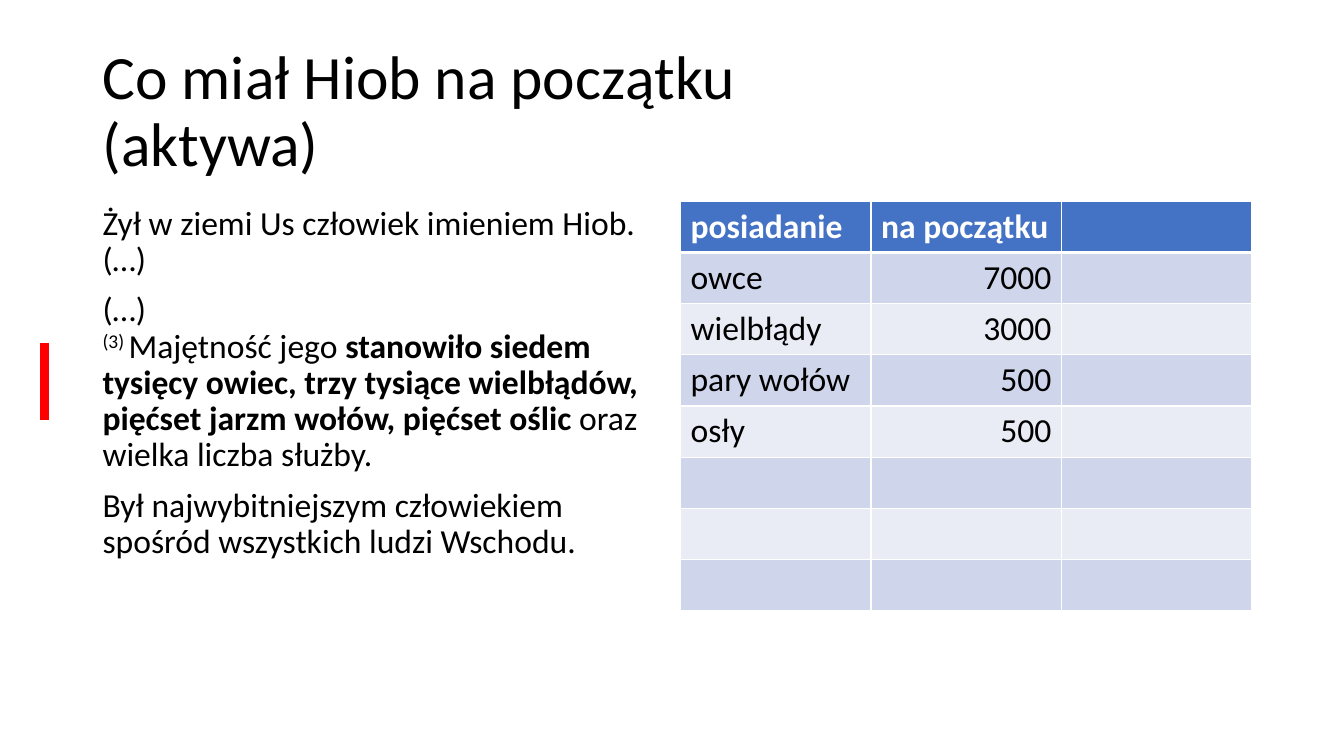
from copy import deepcopy

from lxml.etree import SubElement
from pptx import Presentation
from pptx.dml.color import RGBColor
from pptx.enum.shapes import MSO_CONNECTOR
from pptx.enum.text import MSO_ANCHOR, MSO_AUTO_SIZE, PP_ALIGN
from pptx.oxml.ns import qn
from pptx.util import Cm, Pt

COLORS = {
    "text": "000000",
    "white": "FFFFFF",
    "header": "4472C4",
    "odd_row": "CFD5EA",
    "even_row": "E9EBF5",
    "marker": "FF0000",
}
FONT = "Calibri"
TITLE_LINES = ["Co miał Hiob na początku", "(aktywa)"]

# Each paragraph is a list of (text, style) runs
STORY = [
    [("Żył w ziemi Us człowiek imieniem Hiob. (…)", "plain")],
    [
        ("(…)", "line"),
        ("(3) ", "superscript"),
        ("Majętność jego ", "plain"),
        ("stanowiło siedem tysięcy owiec, trzy tysiące wielbłądów, "
         "pięćset jarzm wołów, pięćset oślic", "bold"),
        (" oraz wielka liczba służby.", "plain"),
    ],
    [("Był najwybitniejszym człowiekiem spośród wszystkich ludzi Wschodu.", "plain")],
]
POSSESSIONS = [
    ("posiadanie", "na początku"),
    ("owce", "7000"),
    ("wielbłądy", "3000"),
    ("pary wołów", "500"),
    ("osły", "500"),
]
ROW_COUNT, COLUMN_COUNT = 8, 3


def rgb(name):
    return RGBColor.from_string(COLORS[name])


def add_run(paragraph, text, size, color="text", bold=False):
    run = paragraph.add_run()
    run.text = text
    run.font.name = FONT
    run.font.size = Pt(size)
    run.font.bold = bold
    run.font.color.rgb = rgb(color)
    return run


def add_break(paragraph, run):
    """Break the line, keeping the text size of the run before it."""
    paragraph.add_line_break()
    paragraph._p.findall(qn("a:br"))[-1].append(deepcopy(run._r.rPr))


def place(shape, left, top, width, height):
    shape.left, shape.top, shape.width, shape.height = left, top, width, height
    shape.text_frame.word_wrap = True
    shape.text_frame.auto_size = MSO_AUTO_SIZE.NONE


def fill_title(slide, left, top, width, height):
    title = slide.shapes.title
    place(title, left, top, width, height)
    title.text_frame.vertical_anchor = MSO_ANCHOR.MIDDLE
    paragraph = title.text_frame.paragraphs[0]
    paragraph.alignment = PP_ALIGN.LEFT
    paragraph.line_spacing = 0.9
    first_line = add_run(paragraph, TITLE_LINES[0], 44)
    add_break(paragraph, first_line)
    add_run(paragraph, TITLE_LINES[1], 44)


def fill_story(slide, left, top, width, height):
    body = slide.placeholders[1]
    place(body, left, top, width, height)
    frame = body.text_frame
    for index, runs in enumerate(STORY):
        paragraph = frame.add_paragraph() if index else frame.paragraphs[0]
        paragraph.line_spacing = 0.9
        paragraph.space_before = Pt(10)
        properties = paragraph._p.get_or_add_pPr()
        properties.set("marL", "0")
        properties.set("indent", "0")
        SubElement(properties, qn("a:buNone"))
        for text, style in runs:
            run = add_run(paragraph, text, 24, bold=style == "bold")
            if style == "superscript":
                run._r.rPr.set("baseline", "30000")
            elif style == "line":
                add_break(paragraph, run)


def set_borders(cell, bottom_width):
    properties = cell._tc.get_or_add_tcPr()
    widths = {"a:lnL": 1, "a:lnR": 1, "a:lnT": 1, "a:lnB": bottom_width}
    for side, width in widths.items():
        line = SubElement(properties, qn(side), w=str(Pt(width)))
        fill = SubElement(line, qn("a:solidFill"))
        SubElement(fill, qn("a:srgbClr"), val=COLORS["white"])


def add_possessions(slide, left, top, width, height):
    table = slide.shapes.add_table(
        ROW_COUNT, COLUMN_COUNT, left, top, width, height).table
    for row in range(ROW_COUNT):
        is_header = row == 0
        fill_color = "header" if is_header else "odd_row" if row % 2 else "even_row"
        for column in range(COLUMN_COUNT):
            cell = table.cell(row, column)
            set_borders(cell, 3 if is_header else 1)
            cell.fill.solid()
            cell.fill.fore_color.rgb = rgb(fill_color)
            if row < len(POSSESSIONS) and column < len(POSSESSIONS[row]):
                paragraph = cell.text_frame.paragraphs[0]
                if column and not is_header:
                    paragraph.alignment = PP_ALIGN.RIGHT
                add_run(paragraph, POSSESSIONS[row][column], 24,
                        "white" if is_header else "text", is_header)


def add_marker(slide, left, top, height):
    marker = slide.shapes.add_connector(
        MSO_CONNECTOR.STRAIGHT, left, top, left, top + height)
    marker.line.color.rgb = rgb("marker")
    marker.line.width = Pt(6)
    SubElement(marker._element.spPr, qn("a:effectLst"))


def main():
    presentation = Presentation()
    presentation.slide_width = Cm(33.87)
    presentation.slide_height = Cm(19.05)
    slide = presentation.slides.add_slide(presentation.slide_layouts[1])

    # Title across the top
    fill_title(slide, Cm(2.33), Cm(1.01), Cm(29.21), Cm(3.68))
    # Story on the left, table on the right
    fill_story(slide, Cm(2.33), Cm(5.07), Cm(14.4), Cm(12.09))
    add_possessions(slide, Cm(17.15), Cm(5.07), Cm(14.4), Cm(10.32))
    # Red bar beside the key verse
    add_marker(slide, Cm(1.12), Cm(8.64), Cm(1.95))

    presentation.save("out.pptx")


if __name__ == "__main__":
    main()
